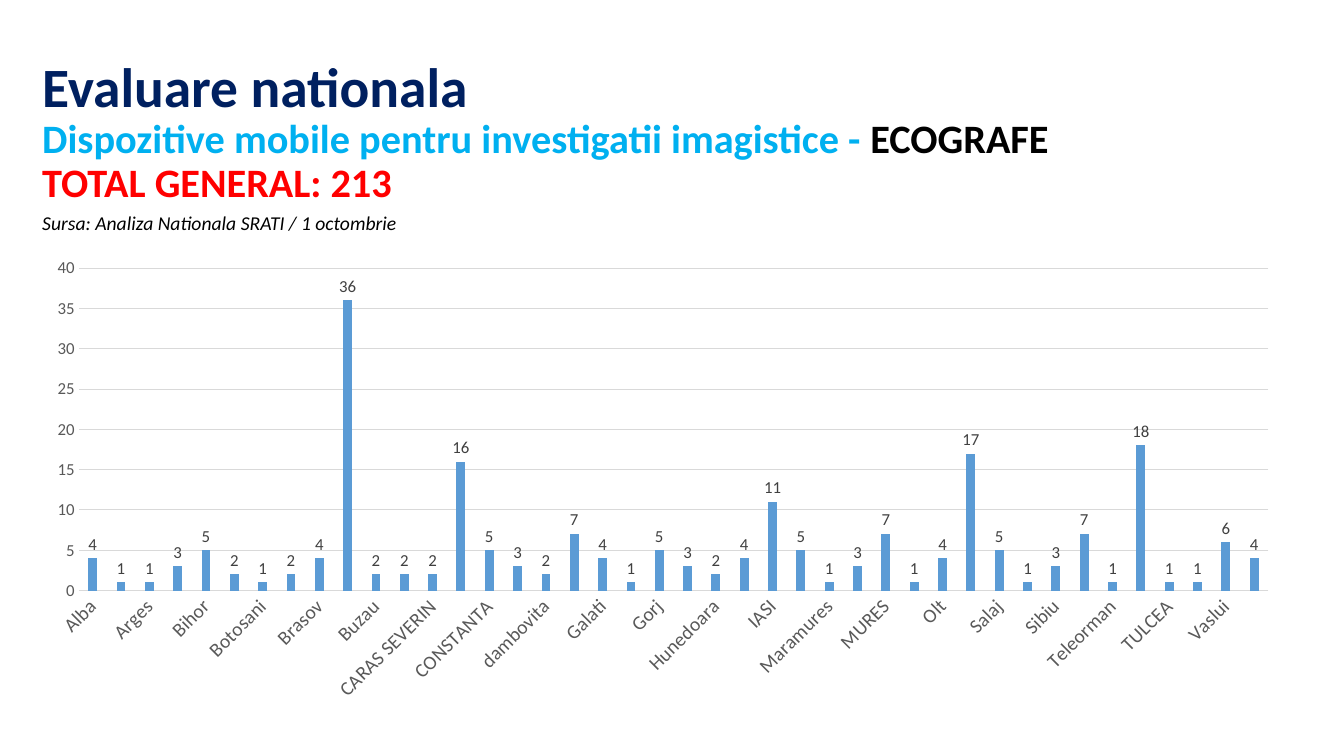
from pptx import Presentation
from pptx.chart.data import CategoryChartData
from pptx.dml.color import RGBColor
from pptx.enum.chart import XL_CHART_TYPE, XL_LABEL_POSITION, XL_TICK_MARK
from pptx.enum.text import MSO_ANCHOR, MSO_AUTO_SIZE
from pptx.util import Inches, Pt

COLUMNS = XL_CHART_TYPE.COLUMN_CLUSTERED
OUTSIDE_END = XL_LABEL_POSITION.OUTSIDE_END
NO_TICK = XL_TICK_MARK.NONE
MIDDLE = MSO_ANCHOR.MIDDLE
GROW = MSO_AUTO_SIZE.SHAPE_TO_FIT_TEXT

NAVY = RGBColor(0x00, 0x20, 0x60)
SKY = RGBColor(0x00, 0xB0, 0xF0)
RED = RGBColor(0xFF, 0x00, 0x00)
BLACK = RGBColor(0x00, 0x00, 0x00)
BAR_BLUE = RGBColor(0x5B, 0x9B, 0xD5)
AXIS_GREY = RGBColor(0x59, 0x59, 0x59)
LABEL_GREY = RGBColor(0x40, 0x40, 0x40)
GRID_GREY = RGBColor(0xD9, 0xD9, 0xD9)

FONT = "Calibri"
LEFT = Inches(0.32)

HEADING_LINES = [
    [("Evaluare nationala", 39.6, NAVY)],
    [("Dispozitive mobile pentru investigatii imagistice - ", 28.8, SKY),
     ("ECOGRAFE", 28.8, BLACK)],
    [("TOTAL GENERAL: 213", 28.8, RED)],
]

ULTRASOUNDS_BY_COUNTY = {
    "Alba": 4, "Arad": 1, "Arges": 1, "Bacau": 3, "Bihor": 5,
    "BISTRITA NASAUD": 2, "Botosani": 1, "BRAILA": 2, "Brasov": 4,
    "BUCURESTI": 36, "Buzau": 2, "Calarasi": 2, "CARAS SEVERIN": 2,
    "Cluj": 16, "CONSTANTA": 5, "Covasna": 3, "dambovita": 2, "Dolj": 7,
    "Galati": 4, "GIURGIU": 1, "Gorj": 5, "Harghita": 3, "Hunedoara": 2,
    "Ialomita": 4, "IASI": 11, "Ilfov": 5, "Maramures": 1, "Mehedinti": 3,
    "MURES": 7, "NEAMT": 1, "Olt": 4, "PRAHOVA": 17, "Salaj": 5,
    "Satu Mare": 1, "Sibiu": 3, "Suceava": 7, "Teleorman": 1, "TIMIS": 18,
    "TULCEA": 1, "Valcea": 1, "Vaslui": 6, "VRANCEA": 4,
}


def set_font(font, size, color, **formats):
    for attribute, value in {"name": FONT, "size": Pt(size), **formats}.items():
        setattr(font, attribute, value)
    font.color.rgb = color


def set_line(line, color):
    line.color.rgb = color
    line.width = Pt(0.75)


def add_heading(slide):
    heading = slide.shapes.add_textbox(LEFT, Inches(0.59), Inches(11.5), Inches(1.45))
    frame = heading.text_frame
    frame.word_wrap = True
    frame.vertical_anchor = MIDDLE
    paragraph = frame.paragraphs[0]
    paragraph.line_spacing = 0.9
    for number, pieces in enumerate(HEADING_LINES):
        if number:
            paragraph.add_line_break()
        for text, size, color in pieces:
            run = paragraph.add_run()
            run.text = text
            set_font(run.font, size, color, bold=True)


def add_source_note(slide):
    note = slide.shapes.add_textbox(LEFT, Inches(2.04), Inches(3.75), Inches(0.34))
    frame = note.text_frame
    frame.word_wrap = False
    frame.auto_size = GROW
    run = frame.paragraphs[0].add_run()
    run.text = "Sursa: Analiza Nationala SRATI / 1 octombrie"
    set_font(run.font, 14, BLACK, italic=True)


def style_axes(chart):
    counties, counts = chart.category_axis, chart.value_axis
    for axis, size in ((counties, 14), (counts, 12)):
        axis.major_tick_mark = axis.minor_tick_mark = NO_TICK
        set_font(axis.tick_labels.font, size, AXIS_GREY)
    set_line(counties.format.line, GRID_GREY)
    # 45 degrees upwards, in 60000ths of a degree
    counties._element.txPr.bodyPr.set("rot", "-2700000")
    counts.minimum_scale, counts.maximum_scale, counts.major_unit = 0, 40, 5
    counts.format.line.fill.background()
    set_line(counts.major_gridlines.format.line, GRID_GREY)


def add_county_chart(slide):
    data = CategoryChartData()
    data.categories = ULTRASOUNDS_BY_COUNTY.keys()
    data.add_series("Series 1", ULTRASOUNDS_BY_COUNTY.values())
    chart = slide.shapes.add_chart(
        COLUMNS, LEFT, Inches(2.47), Inches(12.51), Inches(4.58), data).chart
    chart.has_title = False
    chart.has_legend = False
    set_font(chart.font, 10, BLACK)
    style_axes(chart)

    plot = chart.plots[0]
    plot.gap_width = 219
    plot.overlap = -27
    plot.vary_by_categories = False
    bars = plot.series[0]
    bars.format.fill.solid()
    bars.format.fill.fore_color.rgb = BAR_BLUE
    labels = bars.data_labels
    labels.show_value = True
    labels.position = OUTSIDE_END
    set_font(labels.font, 12, LABEL_GREY)


def main():
    presentation = Presentation()
    presentation.slide_width = Inches(13.33)
    presentation.slide_height = Inches(7.5)
    slide = presentation.slides.add_slide(presentation.slide_layouts[6])
    add_heading(slide)
    add_county_chart(slide)
    add_source_note(slide)
    presentation.save("out.pptx")


if __name__ == "__main__":
    main()
